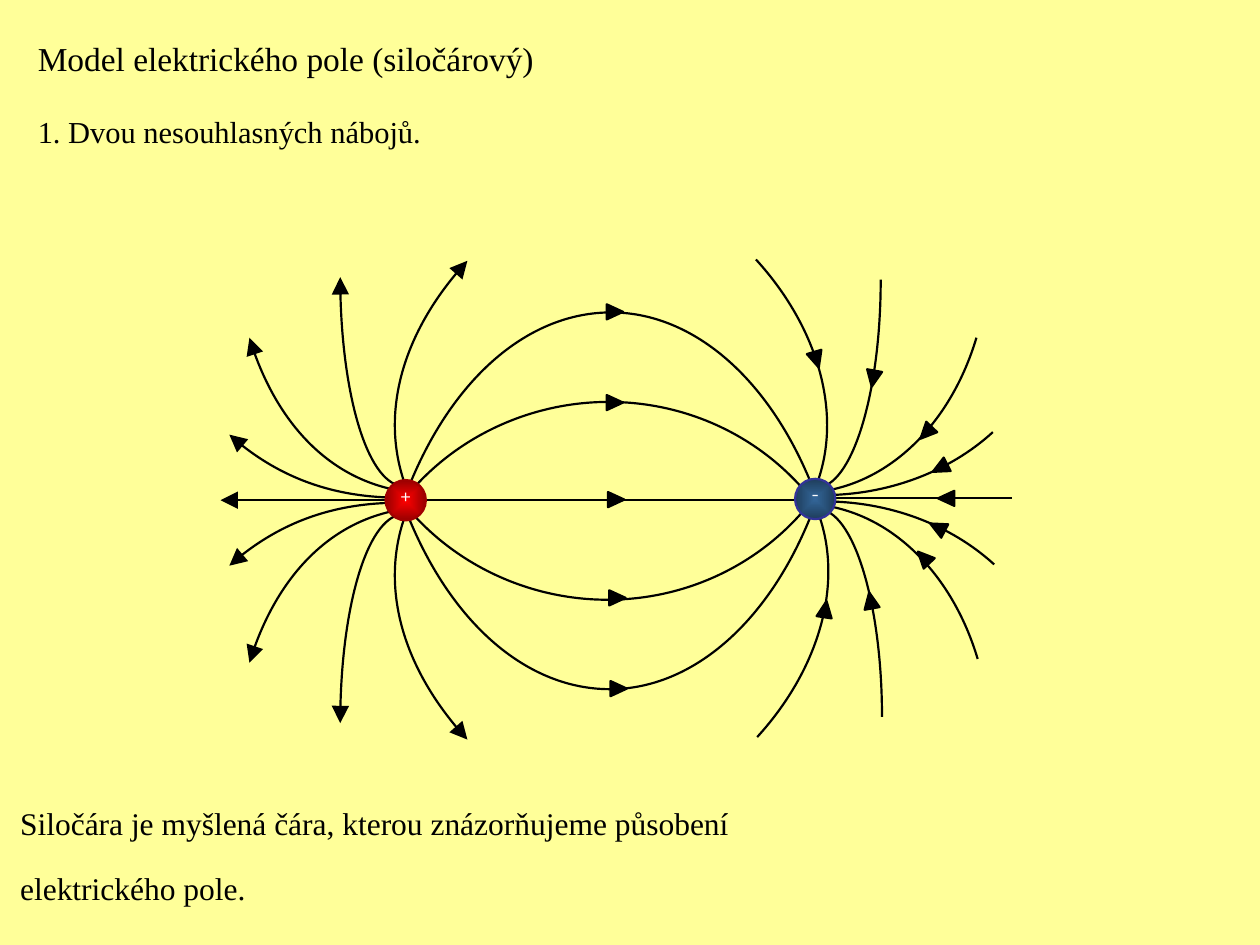
from lxml import etree
from pptx import Presentation
from pptx.dml.color import RGBColor
from pptx.enum.shapes import MSO_CONNECTOR, MSO_SHAPE
from pptx.enum.text import MSO_ANCHOR, MSO_AUTO_SIZE, PP_ALIGN
from pptx.oxml.ns import qn
from pptx.util import Inches, Pt

STRAIGHT = MSO_CONNECTOR.STRAIGHT
TRIANGLE, OVAL = MSO_SHAPE.ISOSCELES_TRIANGLE, MSO_SHAPE.OVAL
TOP, MIDDLE = MSO_ANCHOR.TOP, MSO_ANCHOR.MIDDLE
LEFT, CENTER = PP_ALIGN.LEFT, PP_ALIGN.CENTER
GROW = MSO_AUTO_SIZE.SHAPE_TO_FIT_TEXT

YELLOW = RGBColor(0xFF, 0xFF, 0x99)
BLACK = RGBColor(0, 0, 0)
WHITE = RGBColor(0xFF, 0xFF, 0xFF)
RED, DARK_RED = RGBColor(0xFF, 0, 0), RGBColor(0x98, 0, 0)
BLUE, DARK_BLUE = RGBColor(0x33, 0x66, 0x99), RGBColor(0x1E, 0x3D, 0x5B)
RED_EDGE, BLUE_EDGE = RGBColor(0xA0, 0, 0), RGBColor(0x33, 0x33, 0x99)


def style_line(shape, arrow=False):
    shape.line.color.rgb = BLACK
    shape.line.width = Pt(1.25)
    if arrow:
        etree.SubElement(shape.line._get_or_add_ln(), qn("a:tailEnd"),
                         type="triangle", w="lg", len="lg")


def write(shape, lines, font, color, align, anchor, insets):
    tf = shape.text_frame
    tf.text = "\n".join(text for text, size in lines)
    tf.word_wrap = False
    tf.vertical_anchor = anchor
    tf.margin_left, tf.margin_top, tf.margin_right, tf.margin_bottom = map(Inches, insets)
    for p, (text, size) in zip(tf.paragraphs, lines):
        p.alignment = align
        p.line_spacing = 1.0
        p.space_before = Pt(0)
        r = p.runs[0]
        r.font.name, r.font.size, r.font.color.rgb = font, Pt(size), color
        r._r.get_or_add_rPr().set("baseline", "30000")
    return tf


prs = Presentation()
prs.slide_width, prs.slide_height = Inches(10), Inches(7.5)
s = prs.slides.add_slide(prs.slide_layouts[5])
s.background.fill.solid()
s.background.fill.fore_color.rgb = YELLOW

field = s.shapes.add_group_shape().shapes
for x1, y1, x2, y2, arrow in [(3.39, 3.97, 6.32, 3.97, False),
                              (6.61, 3.95, 8.03, 3.95, False),
                              (3.06, 3.97, 1.75, 3.97, True)]:
    cxn = field.add_connector(STRAIGHT, Inches(x1), Inches(y1), Inches(x2), Inches(y2))
    style_line(cxn, arrow)
    etree.SubElement(cxn._element.spPr, qn("a:effectLst"))

# Each group: sum of the y values of mirrored points, x shift of the mirror, arrowheads, upper curves
curve_groups = [
    (7.94, 0, True, [
        [(3.17, 3.95), (2.66, 3.95), (2.17, 3.77), (1.82, 3.45)],
        [(3.21, 3.9), (2.65, 3.82), (2.18, 3.35), (1.98, 2.68)],
        [(3.21, 3.86), (2.93, 3.86), (2.7, 3.12), (2.7, 2.2)],
        [(3.24, 3.91), (3.01, 3.35), (3.18, 2.64), (3.71, 2.07)]]),
    (7.95, -0.01, False, [
        [(6.44, 3.96), (6.05, 3.47), (5.46, 3.19), (4.83, 3.19),
         (4.23, 3.19), (3.65, 3.45), (3.26, 3.9)],
        [(6.47, 3.92), (6.13, 3.02), (5.51, 2.48), (4.85, 2.48),
         (4.2, 2.48), (3.6, 2.99), (3.25, 3.85)]]),
    (7.91, 0.01, False, [
        [(6.52, 3.9), (7.08, 3.82), (7.55, 3.35), (7.75, 2.68)],
        [(6.48, 3.87), (6.76, 3.87), (6.99, 3.13), (6.99, 2.22)],
        [(6.46, 3.9), (6.7, 3.34), (6.52, 2.63), (6, 2.06)],
        [(6.53, 3.93), (7.04, 3.93), (7.53, 3.75), (7.88, 3.43)]]),
]
for y_sum, dx, arrow, curves in curve_groups:
    for upper in curves:
        lower = [(x + dx, y_sum - y) for x, y in upper]
        for points in (upper, lower):
            pts = [(Inches(x), Inches(y)) for x, y in points]
            builder = field.build_freeform(*pts[0])
            builder.add_line_segments(pts[1:], close=False)
            curve = builder.convert_to_shape()
            curve.shadow.inherit = False
            curve.fill.background()
            style_line(curve, arrow)
            outline = curve._element.find(".//" + qn("a:path"))
            segments = outline.findall(qn("a:lnTo"))
            for i in range(0, len(segments), 3):
                bezier = etree.SubElement(outline, qn("a:cubicBezTo"))
                for segment in segments[i:i + 3]:
                    bezier.append(segment[0])
                    outline.remove(segment)

for x, y, angle in [(4.82, 2.41, 90), (4.82, 3.13, 90), (4.83, 3.9, 90),
                    (4.84, 4.68, 90), (4.85, 5.4, 90), (7.45, 3.89, 270),
                    (7.4, 3.65, 242.6), (7.38, 4.12, 297.4), (7.27, 4.36, 316.2),
                    (7.29, 3.37, 223.8), (6.87, 2.94, 190.2), (6.85, 4.7, 349.8),
                    (6.42, 2.79, 163.5), (6.49, 4.77, 8.6)]:
    head = field.add_shape(TRIANGLE, Inches(x), Inches(y), Inches(0.12), Inches(0.13))
    head.rotation = angle
    head.shadow.inherit = False
    head.fill.solid()
    head.fill.fore_color.rgb = BLACK
    style_line(head)

title = s.shapes.title
title.left, title.top, title.width, title.height = map(Inches, (0.2, 0.2, 7.01, 1.21))
tf = write(title, [("Model elektrického pole (siločárový)", 33),
                   ("1. Dvou nesouhlasných nábojů.", 30)],
           "Times New Roman", BLACK, LEFT, TOP, (0.1, 0.05, 0.1, 0.05))
tf.auto_size = GROW
tf.paragraphs[0].space_after = Pt(3.3)

note = s.shapes.add_textbox(Inches(0.1), Inches(6.28), Inches(9.93), Inches(1.1))
tf = write(note, [("Siločára je myšlená čára, kterou znázorňujeme působení", 31),
                  ("elektrického pole.", 31)],
           "Times New Roman", BLACK, LEFT, TOP, (0.06, 0.05, 0.06, 0.01))
tf.auto_size = GROW

for sign, x, y, inner, outer, edge, bottom in [
        ("+", 3.06, 3.81, RED, DARK_RED, RED_EDGE, 0.04),
        ("-", 6.31, 3.8, BLUE, DARK_BLUE, BLUE_EDGE, 0.08)]:
    charge = s.shapes.add_shape(OVAL, Inches(x), Inches(y), Inches(0.32), Inches(0.32))
    charge.shadow.inherit = False
    charge.fill.gradient()
    for stop, color, position in zip(charge.fill.gradient_stops, (inner, outer), (0, 1)):
        stop.color.rgb = color
        stop.position = position
    grad = charge._element.spPr.find(qn("a:gradFill"))
    grad.remove(grad.find(qn("a:lin")))
    radial = etree.SubElement(grad, qn("a:path"), path="shape")
    etree.SubElement(radial, qn("a:fillToRect"), l="50000", t="50000", r="50000", b="50000")
    charge.line.color.rgb = edge
    charge.line.width = Pt(1.25)
    write(charge, [(sign, 20)], "Montserrat", WHITE, CENTER, MIDDLE, (0.1, 0.06, 0.1, bottom))

prs.save("out.pptx")
